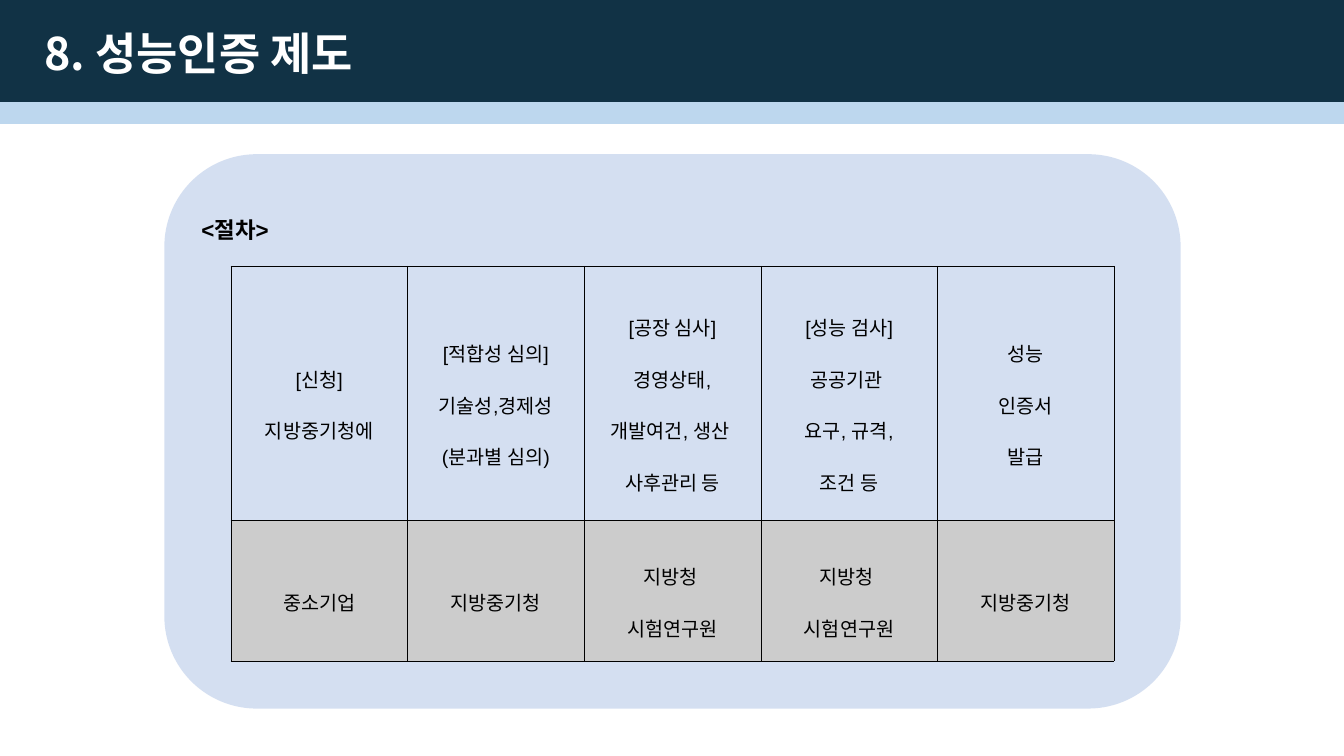
from lxml.etree import SubElement
from pptx import Presentation
from pptx.dml.color import RGBColor
from pptx.enum.shapes import MSO_SHAPE
from pptx.enum.text import MSO_ANCHOR, PP_ALIGN
from pptx.oxml.ns import qn
from pptx.util import Inches, Pt

NAVY = RGBColor(0x11, 0x32, 0x45)
SKY = RGBColor(0xBD, 0xD7, 0xEE)
PANEL = RGBColor(0xB4, 0xC7, 0xE7)
GRAY = RGBColor(0xCC, 0xCC, 0xCC)
BLACK = RGBColor(0, 0, 0)
WHITE = RGBColor(0xFF, 0xFF, 0xFF)
BODY_FONT = "Arial"
KOREAN_FONT = "Noto Sans CJK KR"

STEPS = [
    ["[신청]", "지방중기청에"],
    ["[적합성 심의]", "기술성,경제성", "(분과별 심의)"],
    ["[공장 심사]", "경영상태,", "개발여건, 생산 ", "사후관리 등"],
    ["[성능 검사]", "공공기관 ", "요구, 규격,", "조건 등"],
    ["성능", "인증서", "발급"],
]
AGENCIES = [
    ["중소기업"],
    ["지방중기청"],
    ["지방청 ", "시험연구원"],
    ["지방청 ", "시험연구원"],
    ["지방중기청"],
]
ROW_HEIGHTS = [2.52, 1.4]


def format_paragraph(p, size, color, bold=False, font=BODY_FONT):
    for r in p.runs:
        r.font.size = Pt(size)
        r.font.bold = bold
        r.font.color.rgb = color
        r.font.name = font
        SubElement(r._r.get_or_add_rPr(), qn("a:ea"), typeface=KOREAN_FONT)


def add_block(s, kind, x, y, w, h, color):
    sp = s.shapes.add_shape(kind, Inches(x), Inches(y), Inches(w), Inches(h))
    sp.shadow.inherit = False
    sp.fill.solid()
    sp.fill.fore_color.rgb = color
    sp.line.fill.background()
    return sp


def add_label(s, x, y, w, h, text, size, color, font=BODY_FONT):
    tf = s.shapes.add_textbox(Inches(x), Inches(y), Inches(w), Inches(h)).text_frame
    tf.word_wrap = True
    tf.vertical_anchor = MSO_ANCHOR.MIDDLE
    p = tf.paragraphs[0]
    p.text = text
    format_paragraph(p, size, color, True, font)
    return p


def set_borders(cell):
    tcPr = cell._tc.get_or_add_tcPr()
    for i, side in enumerate(("lnL", "lnR", "lnT", "lnB")):
        ln = tcPr.makeelement(qn(f"a:{side}"), {"w": str(Pt(0.28))})
        fill = SubElement(ln, qn("a:solidFill"))
        SubElement(fill, qn("a:srgbClr"), val=str(BLACK))
        tcPr.insert(i, ln)  # borders precede the fill


def fill_cell(cell, lines, color):
    cell.margin_left = cell.margin_right = Inches(0.07)
    cell.margin_top = cell.margin_bottom = Inches(0.02)
    cell.vertical_anchor = MSO_ANCHOR.MIDDLE
    if color is None:
        cell.fill.background()
    else:
        cell.fill.solid()
        cell.fill.fore_color.rgb = color
    set_borders(cell)
    tf = cell.text_frame
    tf.text = "\n".join(lines)
    for p in tf.paragraphs:
        p.alignment = PP_ALIGN.CENTER
        p.line_spacing = 1.8
        format_paragraph(p, 14, BLACK)


def add_header(s, x, y, w):
    add_block(s, MSO_SHAPE.RECTANGLE, x, y + 1, w, 0.23, SKY)
    add_block(s, MSO_SHAPE.RECTANGLE, x, y, w, 1.01, NAVY)
    title = add_label(s, x + 0.34, y + 0.03, 8.94, 1.05, "8. 성능인증 제도", 32, WHITE, KOREAN_FONT)
    title.line_spacing = 0.9


def add_procedure_table(s, x, y, w):
    rows = [(STEPS, None), (AGENCIES, GRAY)]
    frame = s.shapes.add_table(len(rows), len(STEPS), Inches(x), Inches(y),
                               Inches(w), Inches(sum(ROW_HEIGHTS)))
    table = frame.table
    table.first_row = table.horz_banding = False
    for i, (texts, color) in enumerate(rows):
        table.rows[i].height = Inches(ROW_HEIGHTS[i])
        for j, lines in enumerate(texts):
            fill_cell(table.cell(i, j), lines, color)


def add_procedure(s, x, y, w, h):
    # Translucent rounded panel
    panel = add_block(s, MSO_SHAPE.ROUNDED_RECTANGLE, x, y, w, h, PANEL)
    color = panel._element.spPr.find(f".//{qn('a:srgbClr')}")
    SubElement(color, qn("a:alpha"), val="56000")
    # Heading and table
    add_label(s, x + 0.27, y + 0.55, 3, 0.4, "<절차>", 16, BLACK)
    add_procedure_table(s, x + 0.66, y + 1.11, w - 1.32)


def main():
    prs = Presentation()
    prs.slide_width = Inches(13.33)
    prs.slide_height = Inches(7.5)
    s = prs.slides.add_slide(prs.slide_layouts[6])
    add_header(s, 0, 0, 13.33)
    add_procedure(s, 1.63, 1.53, 10.08, 5.5)
    prs.save("out.pptx")


if __name__ == "__main__":
    main()
